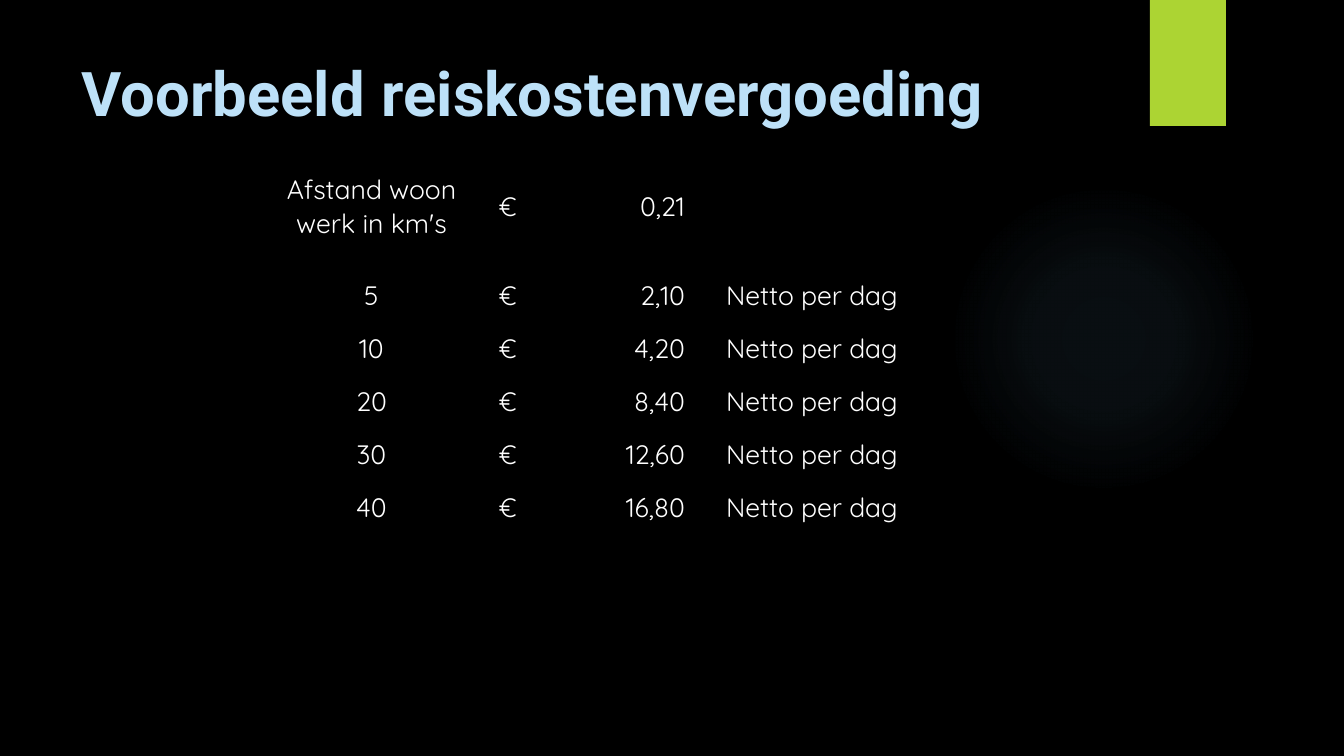
from dataclasses import dataclass
from pptx import Presentation
from pptx.dml.color import RGBColor as RGB
from pptx.enum.shapes import MSO_SHAPE as SHAPE
from pptx.enum.text import MSO_ANCHOR as ANCHOR, PP_ALIGN as ALIGN
from pptx.oxml import parse_xml
from pptx.util import Pt

NS = 'xmlns:a="http://schemas.openxmlformats.org/drawingml/2006/main"'


@dataclass(frozen=True)
class Theme:
    back: str = "000000"
    glow: str = "7AC4F0"
    lime: str = "ACD433"
    head: str = "BDE1F8"
    space: str = "EBEBEB"
    text: str = "FFFFFF"
    bold: str = "Roboto"
    body: str = "Quicksand"
    big: int = 44
    gap: int = 42
    small: int = 19


LOOK = Theme()
RATES = [
    ("Afstand woon werk in km's", "0,21", ""),
    ("5", "2,10", "Netto per dag"),
    ("10", "4,20", "Netto per dag"),
    ("20", "8,40", "Netto per dag"),
    ("30", "12,60", "Netto per dag"),
    ("40", "16,80", "Netto per dag"),
]


def px(count):
    return round(count * 914400 / 100.8)


def put(item, values):
    for name, value in values.items():
        setattr(item, name, value)


def write(para, text, name, size, color, bold=False):
    run = para.add_run()
    run.text = text
    put(run.font, {"name": name, "size": Pt(size), "bold": bold})
    run.font.color.rgb = RGB.from_string(color)


def draw_shape(slide, kind, box, color):
    shape = slide.shapes.add_shape(kind, *map(px, box))
    shape.shadow.inherit = False
    shape.line.fill.background()
    shape.fill.solid()
    shape.fill.fore_color.rgb = RGB.from_string(color)
    return shape


def draw_glow(slide, box):
    glow = draw_shape(slide, SHAPE.OVAL, box, LOOK.glow)
    stops = "".join(
        f'<a:gs pos="{spot * 1000}"><a:srgbClr val="{LOOK.glow}">'
        f'<a:alpha val="{alpha * 1000}"/></a:srgbClr></a:gs>'
        for spot, alpha in ((0, 7), (36, 6), (69, 0)))
    fade = parse_xml(
        f'<a:gradFill {NS} rotWithShape="1"><a:gsLst>{stops}</a:gsLst>'
        '<a:path path="circle"><a:fillToRect l="50000" t="50000" '
        'r="50000" b="50000"/></a:path></a:gradFill>')
    props = glow.element.spPr
    props.replace(props.find("{*}solidFill"), fade)


def draw_tab(slide, box):
    tab = draw_shape(slide, SHAPE.RECTANGLE, box, LOOK.lime)
    tab.element.spPr.find("{*}effectLst").append(parse_xml(
        f'<a:outerShdw {NS} blurRad="{Pt(3)}" dist="{Pt(2)}" dir="5400000" '
        f'rotWithShape="0"><a:srgbClr val="{LOOK.back}">'
        '<a:alpha val="45000"/></a:srgbClr></a:outerShdw>'))


def draw_title(slide, box):
    frame = slide.shapes.add_textbox(*map(px, box)).text_frame
    put(frame, {"word_wrap": True, "vertical_anchor": ANCHOR.TOP})
    para = frame.paragraphs[0]
    write(para, "Voorbeeld", LOOK.bold, LOOK.big, LOOK.head, True)
    write(para, " ", LOOK.body, LOOK.gap, LOOK.space)
    write(para, "reiskostenvergoeding", LOOK.bold, LOOK.big, LOOK.head, True)


def edge_cell(cell, row, last):
    top = 1 if row < 2 else 0.5
    base = 1 if row in (0, last) else 0.5
    props = cell._tc.get_or_add_tcPr()
    for side, width in zip("LRTB", (1, 1, top, base)):
        props.append(parse_xml(
            f'<a:ln{side} {NS} w="{Pt(width)}"><a:solidFill>'
            f'<a:srgbClr val="{LOOK.back}"/></a:solidFill></a:ln{side}>'))
    cell.fill.background()


def fill_cell(cell, text, money):
    put(cell, {"vertical_anchor": ANCHOR.MIDDLE, "margin_top": px(1),
               "margin_left": px(20 if money else 1),
               "margin_right": px(1), "margin_bottom": 0})
    para = cell.text_frame.paragraphs[0]
    para.alignment = ALIGN.LEFT if money else ALIGN.CENTER
    if money:
        para._p.get_or_add_pPr().append(parse_xml(
            f'<a:tabLst {NS}><a:tab pos="{px(186)}" algn="r"/></a:tabLst>'))
        text = f"€\t{text}"
    if text:
        write(para, text, LOOK.body, LOOK.small, LOOK.text)


def draw_rates(slide, left, top):
    wide, tall = (215, 227, 212), (126,) + (53,) * 5
    box = (left, top, sum(wide), sum(tall))
    table = slide.shapes.add_table(
        len(tall), len(wide), *map(px, box)).table
    put(table, {"first_row": False, "horz_banding": False})
    for col, width in zip(table.columns, wide):
        col.width = px(width)
    for row, height in zip(table.rows, tall):
        row.height = px(height)
    for row, texts in enumerate(RATES):
        for col, text in enumerate(texts):
            cell = table.cell(row, col)
            edge_cell(cell, row, len(RATES) - 1)
            fill_cell(cell, text, col == 1)


def main():
    deck = Presentation()
    put(deck, {"slide_width": px(1344), "slide_height": px(756)})
    slide = deck.slides.add_slide(deck.slide_layouts[6])
    slide.background.fill.solid()
    slide.background.fill.fore_color.rgb = RGB.from_string(LOOK.back)
    draw_glow(slide, (949, 184, 310, 310))
    draw_tab(slide, (1150, 0, 76, 126))
    draw_title(slide, (72, 50, 1037, 154))
    draw_rates(slide, 264, 143)
    deck.save("out.pptx")


if __name__ == "__main__":
    main()
